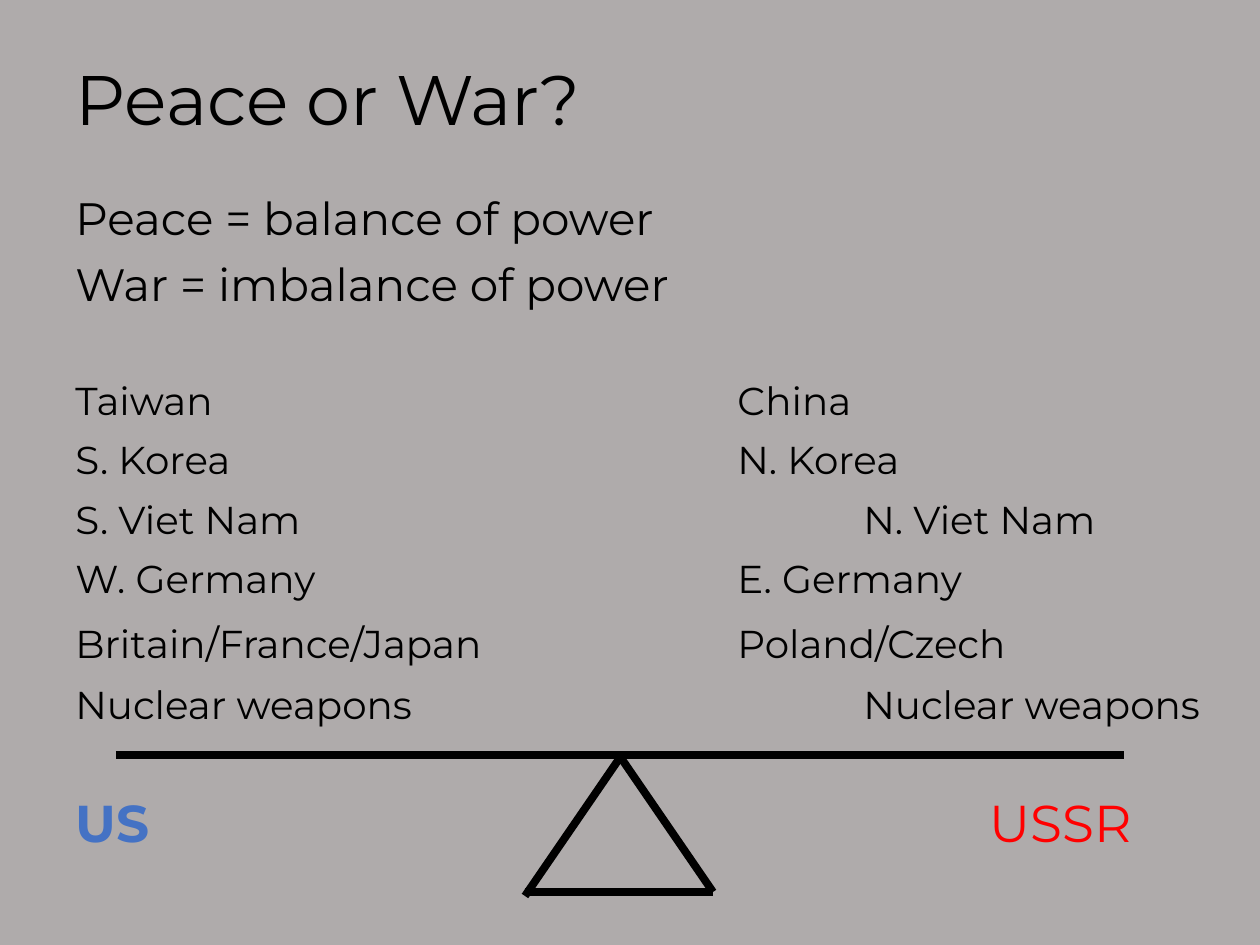
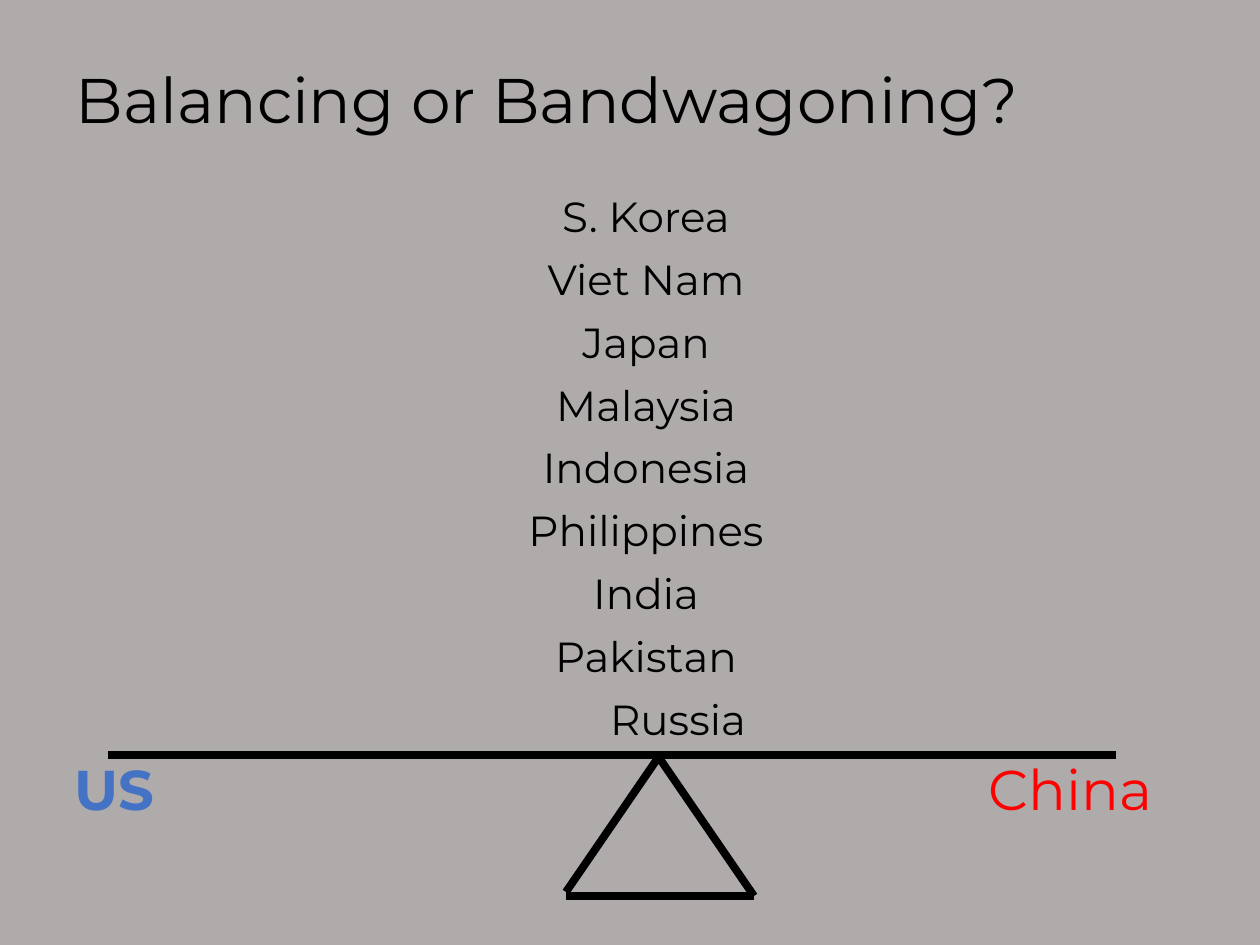
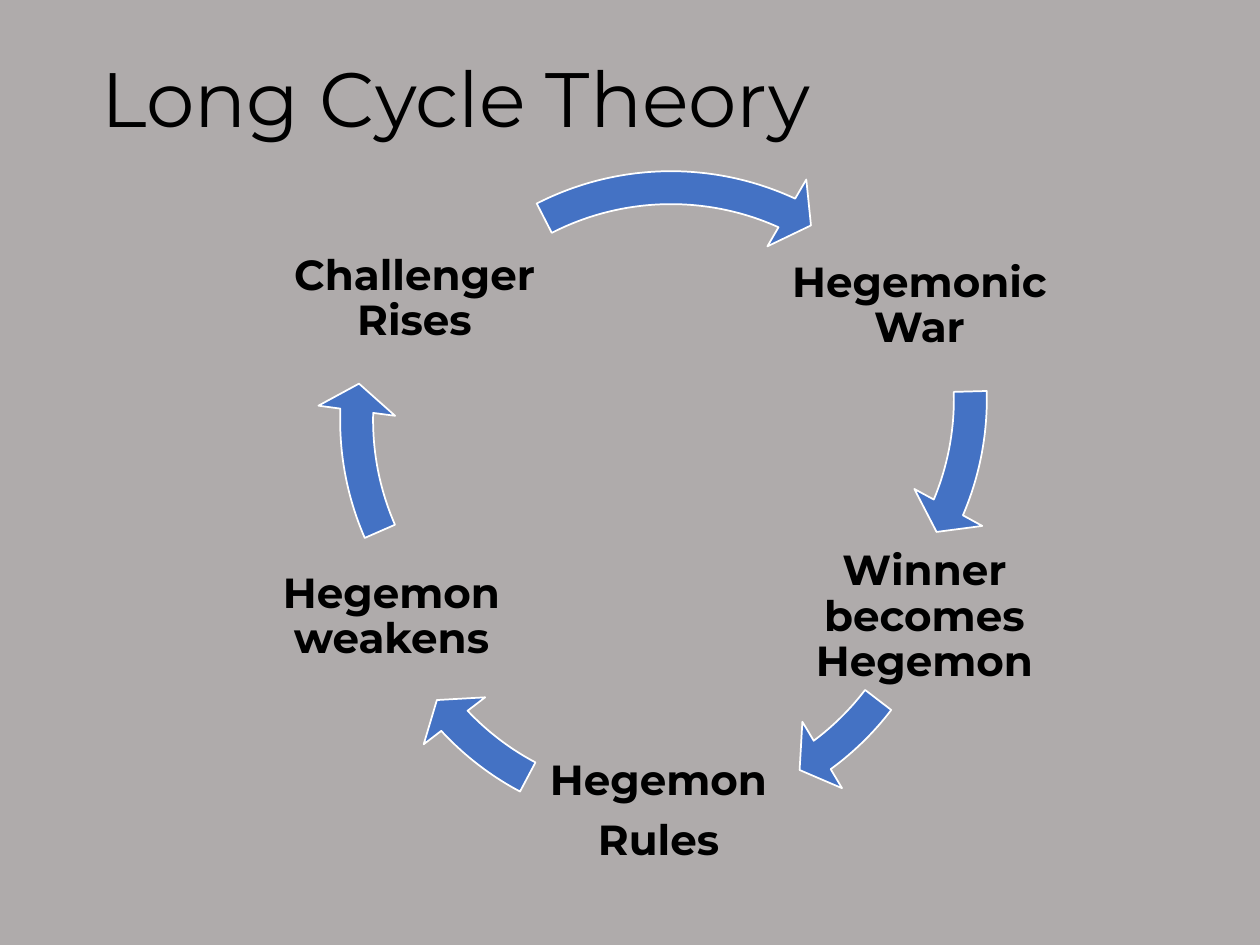
import pptx
import pptx.util
import pptx.dml.color
import pptx.enum.shapes
import pptx.enum.text
import pptx.oxml
import pptx.oxml.ns
from lxml import etree

RGB = pptx.dml.color.RGBColor
ALIGN = pptx.enum.text.PP_ALIGN
ANCHOR = pptx.enum.text.MSO_ANCHOR
Pt = pptx.util.Pt

GREY = RGB(0xAF, 0xAB, 0xAB)
BLACK = RGB(0, 0, 0)
BLUE = RGB(0x44, 0x72, 0xC4)
RED = RGB(0xFF, 0, 0)
WHITE = RGB(0xFF, 0xFF, 0xFF)
FONT = "Montserrat"
EMU_PER_PX = 914400 / 126

ARROW_SIZE = 634
RIVAL_TAB = 914  # where the right-hand power starts under the beam


def px(n):
    return pptx.util.Emu(round(n * EMU_PER_PX))


def style(font, size, color=BLACK, bold=False):
    font.name, font.size, font.bold = FONT, Pt(size), bold
    font.color.rgb = color


def add_title(prs, text, size, box):
    """Add a title-only slide and place its title."""
    s = prs.slides.add_slide(prs.slide_layouts[5])
    title = s.shapes.title
    title.left, title.top, title.width, title.height = map(px, box)
    tf = title.text_frame
    tf.text = text
    tf.word_wrap = True
    tf.auto_size = pptx.enum.text.MSO_AUTO_SIZE.NONE
    tf.vertical_anchor = ANCHOR.MIDDLE
    p = tf.paragraphs[0]
    p.alignment, p.line_spacing = ALIGN.LEFT, 0.9
    style(p.font, size)
    return s


def add_box(s, box):
    tf = s.shapes.add_textbox(*map(px, box)).text_frame
    tf.word_wrap = True
    return tf


def add_par(tf, before=0, align=ALIGN.LEFT, tab=None):
    """Start a paragraph, using the frame's empty first one if free."""
    p = tf.paragraphs[0] if not tf.paragraphs[0].runs else tf.add_paragraph()
    p.alignment, p.line_spacing = align, 0.9
    p.space_before = Pt(before)
    if tab:
        tabs = etree.SubElement(p._p.get_or_add_pPr(), pptx.oxml.ns.qn("a:tabLst"))
        etree.SubElement(tabs, pptx.oxml.ns.qn("a:tab"), pos=str(px(tab)), algn="l")
    return p


def add_line(tf, text, size, **layout):
    p = add_par(tf, **layout)
    p.add_run().text = text
    style(p.font, size)
    return p


def add_powers(tf, left, right, size, before):
    """The two powers under the beam, blue against red."""
    p = add_par(tf, before, tab=RIVAL_TAB)
    for text, color, bold in ((left, BLUE, True), ("\t" + right, RED, False)):
        r = p.add_run()
        r.text = text
        style(r.font, size, color, bold)


def add_balance(s, x, y, pivot, left_drop, right_drop):
    """Beam on a triangular fulcrum; drops lower each leg a little."""
    half, leg, width = 94, 137, 1008
    apex = x + pivot
    base_y = y + right_drop + leg
    bars = (
        (x, y, x + width, y),
        (apex, y + left_drop, apex - half, y + left_drop + leg),
        (apex, y + right_drop, apex + half, base_y),
        (apex - half, base_y, apex + half, base_y),
    )
    for bar in bars:
        line = s.shapes.add_connector(pptx.enum.shapes.MSO_CONNECTOR.STRAIGHT, *map(px, bar))
        line.line.color.rgb, line.line.width = BLACK, Pt(4.5)
        etree.SubElement(line._element.spPr, pptx.oxml.ns.qn("a:effectLst"))


def peace_slide(prs):
    s = add_title(prs, "Peace or War?", 40, (63, 53, 1134, 100))
    tf = add_box(s, (63, 190, 1168, 703))
    add_line(tf, "Peace = balance of power", 25.9)
    add_line(tf, "War = imbalance of power", 25.9, before=10)
    # Opposing sides: left, right, tab position, space before
    sides = (
        ("Taiwan", "China", 662, 40),
        ("S. Korea", "N. Korea", 662, 10),
        ("S. Viet Nam", "N. Viet Nam", 788, 10),
        ("W. Germany", "E. Germany", 662, 10),
        ("Britain/France/Japan", "Poland/Czech", 662, 13),
        ("Nuclear weapons", "Nuclear weapons", 788, 11),
    )
    for left, right, tab, before in sides:
        add_line(tf, f"{left}\t{right}", 22.2, before=before, tab=tab)
    add_powers(tf, "US", "USSR", 29.6, 40)
    add_balance(s, 116, 755, 503, 4, 0)


def bandwagon_slide(prs):
    s = add_title(prs, "Balancing or Bandwagoning?", 36, (63, 53, 1134, 100))
    tf = add_box(s, (62, 190, 1168, 723))
    states = ("S. Korea", "Viet Nam", "Japan", "Malaysia", "Indonesia",
              "Philippines", "India", "Pakistan", "Russia")
    for i, state in enumerate(states):
        p = add_line(tf, state, 24, before=10 if i else 0, align=ALIGN.CENTER)
    # Russia leans to the right
    p._p.get_or_add_pPr().set("marL", str(px(64)))
    add_powers(tf, "US", "China", 32, 10)
    add_balance(s, 108, 755, 552, 0, 4)


def add_stage(s, lines, box):
    tf = add_box(s, box)
    tf.vertical_anchor = ANCHOR.MIDDLE
    tf.margin_left = tf.margin_right = tf.margin_top = tf.margin_bottom = px(4)
    for i, text in enumerate(lines):
        p = add_line(tf, text, 24, before=8.4 if i else 0, align=ALIGN.CENTER)
        p.font.bold = True


def add_cycle_arrow(s, x, y, end, start):
    """Arc arrow; end and start are clockwise angle adjustments."""
    sp = s.shapes.add_shape(pptx.enum.shapes.MSO_SHAPE.CIRCULAR_ARROW,
                            *map(px, (x, y, ARROW_SIZE, ARROW_SIZE)))
    for i, value in enumerate((0.052, 3.356, end, start, 0.061)):
        sp.adjustments[i] = value
    sp.shadow.inherit = False
    sp.fill.solid()
    sp.fill.fore_color.rgb = BLUE
    sp.line.color.rgb, sp.line.width = WHITE, Pt(1)


def add_cycle(s, x, y):
    # Stage lines, its box (left, top, width), arrow (left, top, end, start)
    stages = (
        (["Hegemonic War"], (574, 140, 297), (178, 0, 13.76, 215.07)),
        (["Winner becomes Hegemon"], (589, 451, 277), (143, 132, 32.15, 22.43)),
        (["Hegemon", "Rules"], (324, 645, 275), (144, 132, 82.2, 70.74)),
        (["Hegemon weakens"], (0, 451, 389), (121, 21, 109.14, 93.85)),
        (["Challenger Rises"], (87, 133, 261), (157, 67, 176.76, 145.75)),
    )
    for lines, (left, top, width), (ax, ay, end, start) in stages:
        add_stage(s, lines, (x + left, y + top, width, 169))
        add_cycle_arrow(s, x + ax, y + ay, end, start)


def cycle_slide(prs):
    s = add_title(prs, "Long Cycle Theory", 44, (89, 49, 1045, 108))
    add_cycle(s, 197, 82)


def main():
    prs = pptx.Presentation()
    prs.slide_width, prs.slide_height = px(1260), px(945)
    fill = prs.slide_master.background.fill
    fill.solid()
    fill.fore_color.rgb = GREY
    peace_slide(prs)
    bandwagon_slide(prs)
    cycle_slide(prs)
    prs.save("out.pptx")


if __name__ == "__main__":
    main()
